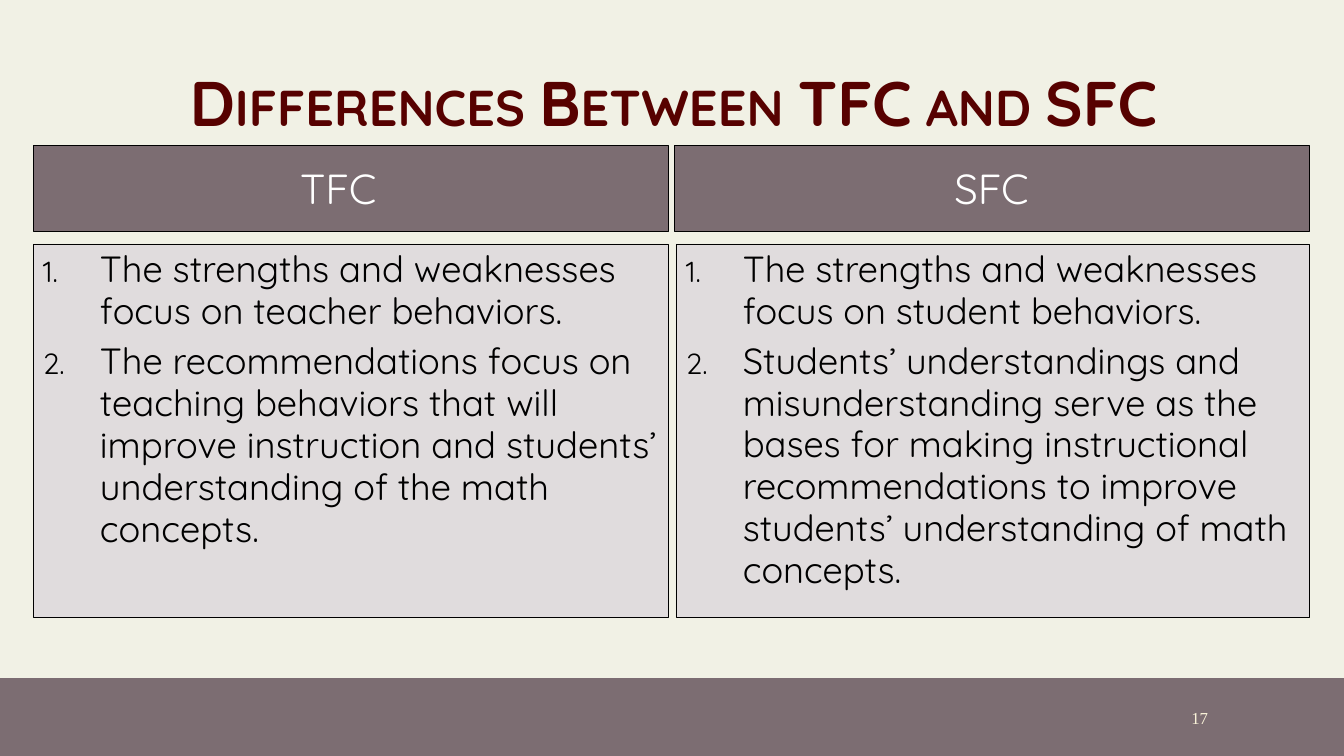
import pptx
import pptx.util
import pptx.dml.color
import pptx.enum.shapes
import pptx.enum.text
import pptx.oxml
import pptx.oxml.ns

PLUM, PALE, CREAM = "7C6D72", "E0DCDD", "F1F1E5"
BLACK, WHITE, MAROON, IVORY = "000000", "FFFFFF", "570100", "FAF3D9"
ALIGN = pptx.enum.text.PP_ALIGN
ANCHOR = pptx.enum.text.MSO_ANCHOR


def px(length):
    return pptx.util.Emu(round(length * 914400 / 100.8))


def colour(code):
    return pptx.dml.color.RGBColor.from_string(code)


def xml(markup):
    name, rest = markup.split(" ", 1)
    return pptx.oxml.parse_xml(f"{name} {pptx.oxml.ns.nsdecls('a')} {rest}")


class SlideBuilder:
    def __init__(self, deck, font):
        self.font = font
        self.slide = deck.slides.add_slide(deck.slide_layouts[6])

    def background(self, fill):
        self.slide.background.fill.solid()
        self.slide.background.fill.fore_color.rgb = colour(fill)

    def panel(self, left, top, width, height, fill, line=None):
        box = self.slide.shapes.add_shape(
            pptx.enum.shapes.MSO_SHAPE.RECTANGLE, px(left), px(top), px(width), px(height))
        box.shadow.inherit = False
        box.fill.solid()
        box.fill.fore_color.rgb = colour(fill)
        if line:
            box.line.color.rgb = colour(line)
            box.line.width = pptx.util.Pt(0.5)
        else:
            box.line.fill.background()
        return box

    def text_box(self, left, top, width, height):
        return self.slide.shapes.add_textbox(px(left), px(top), px(width), px(height))

    def label(self, box, text, size, ink, align, font=None):
        frame = box.text_frame
        frame.word_wrap = True
        frame.vertical_anchor = ANCHOR.MIDDLE
        para = frame.paragraphs[0]
        para.text = text
        self.style(para, size, ink, align, font)
        return para

    def style(self, para, size, ink, align, font=None):
        para.alignment = align
        para.font.name = font or self.font
        para.font.size = pptx.util.Pt(size)
        para.font.color.rgb = colour(ink)

    def numbered_list(self, box, items, size):
        frame = box.text_frame
        frame.word_wrap = True
        frame.vertical_anchor = ANCHOR.TOP
        for index, item in enumerate(items):
            para = frame.paragraphs[0] if index == 0 else frame.add_paragraph()
            para.text = item
            para.line_spacing = 0.96
            para.space_after = pptx.util.Pt(3)
            if index:
                para.space_before = pptx.util.Pt(3)
            properties = para._p.get_or_add_pPr()
            properties.set("marL", str(px(57)))
            properties.set("indent", str(-px(57)))
            properties.append(xml('<a:buSzPct val="80000"/>'))
            properties.append(xml('<a:buFont typeface="Quicksand"/>'))
            properties.append(xml('<a:buAutoNum type="arabicPeriod"/>'))
            self.style(para, size, BLACK, ALIGN.LEFT)

    def title(self, box, text, size):
        para = self.label(box, text, size, MAROON, ALIGN.CENTER)
        para.line_spacing = 0.9
        para.font.bold = True
        span = para.runs[0]
        span.font.color.rgb = colour(MAROON)
        properties = span._r.get_or_add_rPr()
        properties.set("cap", "small")
        properties.append(xml(
            '<a:effectLst ><a:outerShdw blurRad="38100" dist="38100" dir="2700000" algn="tl">'
            '<a:srgbClr val="000000"><a:alpha val="43000"/></a:srgbClr>'
            '</a:outerShdw></a:effectLst>'))


def main():
    deck = pptx.Presentation()
    deck.slide_width, deck.slide_height = px(1344), px(756)
    page = SlideBuilder(deck, "Quicksand")

    # Background and footer band
    page.background(CREAM)
    page.panel(0, 678, 1344, 78, PLUM)

    # Two compared columns: heading above a numbered list
    columns = [
        (33, 33, 635, "TFC\t", 26, [
            "The strengths and weaknesses focus on teacher behaviors.",
            "The recommendations focus on teaching behaviors that will improve instruction "
            "and students’ understanding of the math concepts."]),
        (674, 676, 633, "SFC", 25.9, [
            "The strengths and weaknesses focus on student behaviors.",
            "Students’ understandings and misunderstanding serve as the bases for making "
            "instructional recommendations to improve students’ understanding of math concepts."]),
    ]
    for head_left, list_left, list_width, heading, size, points in columns:
        head = page.panel(head_left, 145, 635, 86, PLUM, BLACK)
        page.label(head, heading, 30, WHITE, ALIGN.CENTER).space_after = pptx.util.Pt(3)
        body = page.panel(list_left, 244, list_width, 373, PALE, BLACK)
        page.numbered_list(body, points, size)

    # Slide number and title
    number = page.text_box(1029, 698, 189, 40)
    page.label(number, "17", 12, IVORY, ALIGN.RIGHT, "Times New Roman")
    page.title(page.text_box(58, 32, 1231, 149), "Differences Between TFC and SFC", 45)

    deck.save("out.pptx")


if __name__ == "__main__":
    main()
